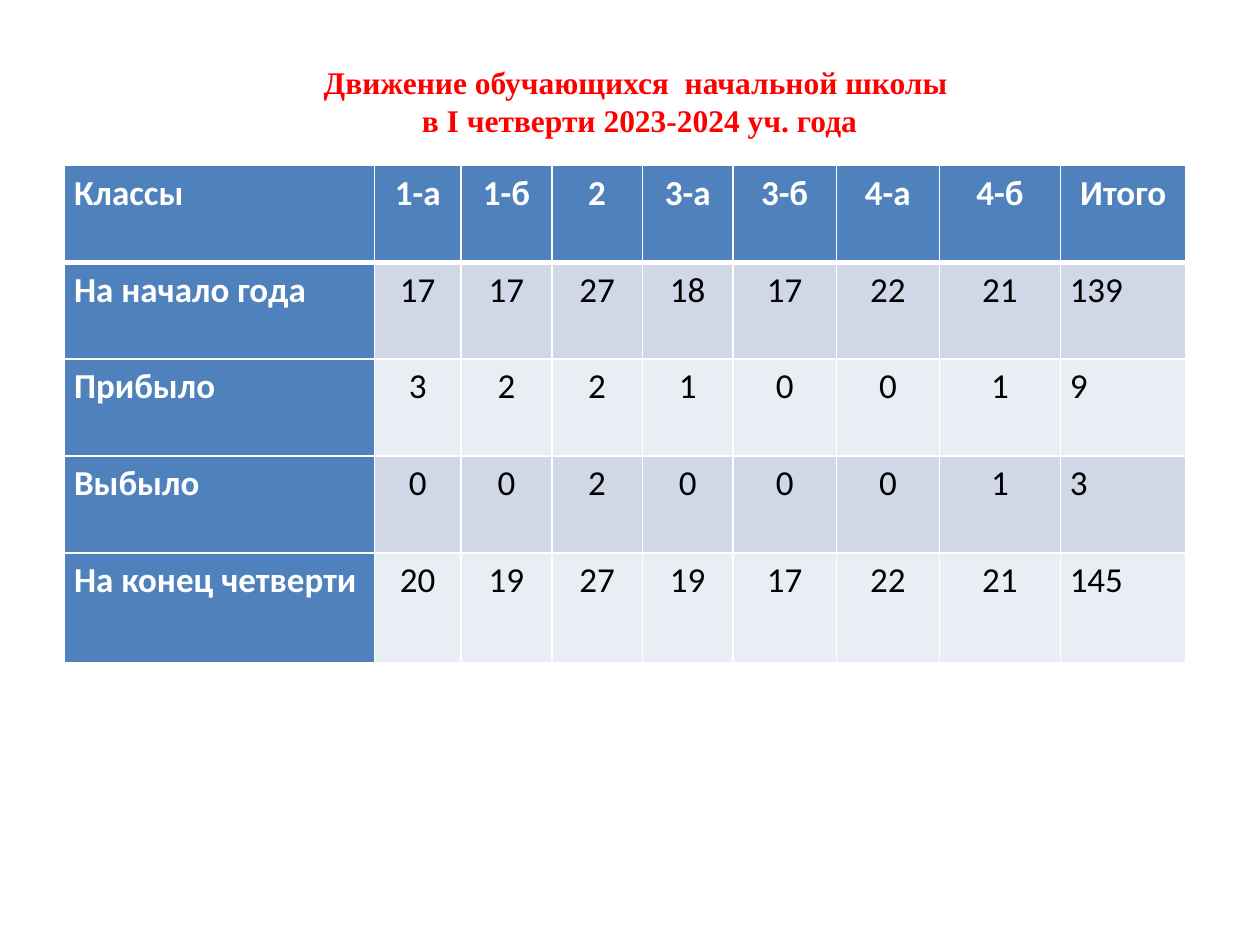
from lxml import etree
from pptx import Presentation
from pptx.dml.color import RGBColor
from pptx.enum import text
from pptx.oxml import ns
from pptx.util import Pt

TITLE = ["Движение обучающихся  начальной школы ", "в I четверти 2023-2024 уч. года"]
ROWS = [
    ["Классы", "1-а", "1-б", "2", "3-а", "3-б", "4-а", "4-б", "Итого"],
    ["На начало года", 17, 17, 27, 18, 17, 22, 21, 139],
    ["Прибыло", 3, 2, 2, 1, 0, 0, 1, 9],
    ["Выбыло", 0, 0, 2, 0, 0, 0, 1, 3],
    ["На конец четверти", 20, 19, 27, 19, 17, 22, 21, 145],
]
COL_WEIGHTS = [2.46, 0.69, 0.72, 0.72, 0.72, 0.82, 0.82, 0.96, 1]
ROW_WEIGHTS = [0.77, 0.77, 0.77, 0.77, 0.87]
HEADER, BANDS = "4F81BD", ["E9EDF4", "D0D8E8"]


def color(value):
    return RGBColor.from_string(value)


def style_paragraph(p, font, size, fill, bold, align):
    p.alignment = align
    for r in p.runs:
        r.font.name = font
        r.font.size = Pt(size)
        r.font.bold = bold
        r.font.color.rgb = color(fill)


def set_borders(cell, widths):
    tc_pr = cell._tc.get_or_add_tcPr()
    for i, (side, width) in enumerate(widths.items()):
        ln = etree.Element(ns.qn(f"a:ln{side}"), w=str(Pt(width)))
        fill = etree.SubElement(ln, ns.qn("a:solidFill"))
        etree.SubElement(fill, ns.qn("a:srgbClr"), val="FFFFFF")
        tc_pr.insert(i, ln)


def add_title(s, left, top, width, height):
    tf = s.shapes.add_textbox(Pt(left), Pt(top), Pt(width), Pt(height)).text_frame
    tf.word_wrap = True
    tf.auto_size = text.MSO_AUTO_SIZE.SHAPE_TO_FIT_TEXT
    tf.text = "\n".join(TITLE)
    for p in tf.paragraphs:
        style_paragraph(p, "Times New Roman", 18, "FF0000", True, text.PP_ALIGN.CENTER)


def fill_cell(cell, value, row, col):
    is_header = row == 0 or col == 0
    is_left = col == 0 or (row > 0 and col == len(COL_WEIGHTS) - 1)
    cell.margin_left = cell.margin_right = Pt(5.4)
    cell.margin_top = cell.margin_bottom = 0
    cell.fill.solid()
    cell.fill.fore_color.rgb = color(HEADER if is_header else BANDS[row % 2])
    set_borders(cell, {"L": 1, "R": 1, "T": 3 if row == 1 else 1, "B": 3 if row == 0 else 1})
    cell.text_frame.text = str(value)
    p = cell.text_frame.paragraphs[0]
    p.line_spacing = 1.15
    style_paragraph(p, "Calibri", 20, "FFFFFF" if is_header else "000000", is_header,
                    text.PP_ALIGN.LEFT if is_left else text.PP_ALIGN.CENTER)


def add_movement_table(s, left, top, width, height):
    frame = s.shapes.add_table(len(ROWS), len(COL_WEIGHTS),
                               Pt(left), Pt(top), Pt(width), Pt(height))
    table = frame.table
    for column, weight in zip(table.columns, COL_WEIGHTS):
        column.width = Pt(width * weight / sum(COL_WEIGHTS))
    for row, weight in zip(table.rows, ROW_WEIGHTS):
        row.height = Pt(height * weight / sum(ROW_WEIGHTS))
    for i, values in enumerate(ROWS):
        for j, value in enumerate(values):
            fill_cell(table.cell(i, j), value, i, j)


def main():
    prs = Presentation()
    prs.slide_width, prs.slide_height = Pt(720), Pt(540)
    s = prs.slides.add_slide(prs.slide_layouts[6])
    add_movement_table(s, 36.9, 94.5, 641, 284)
    add_title(s, 116, 32.4, 499, 51)
    prs.save("out.pptx")


if __name__ == "__main__":
    main()
